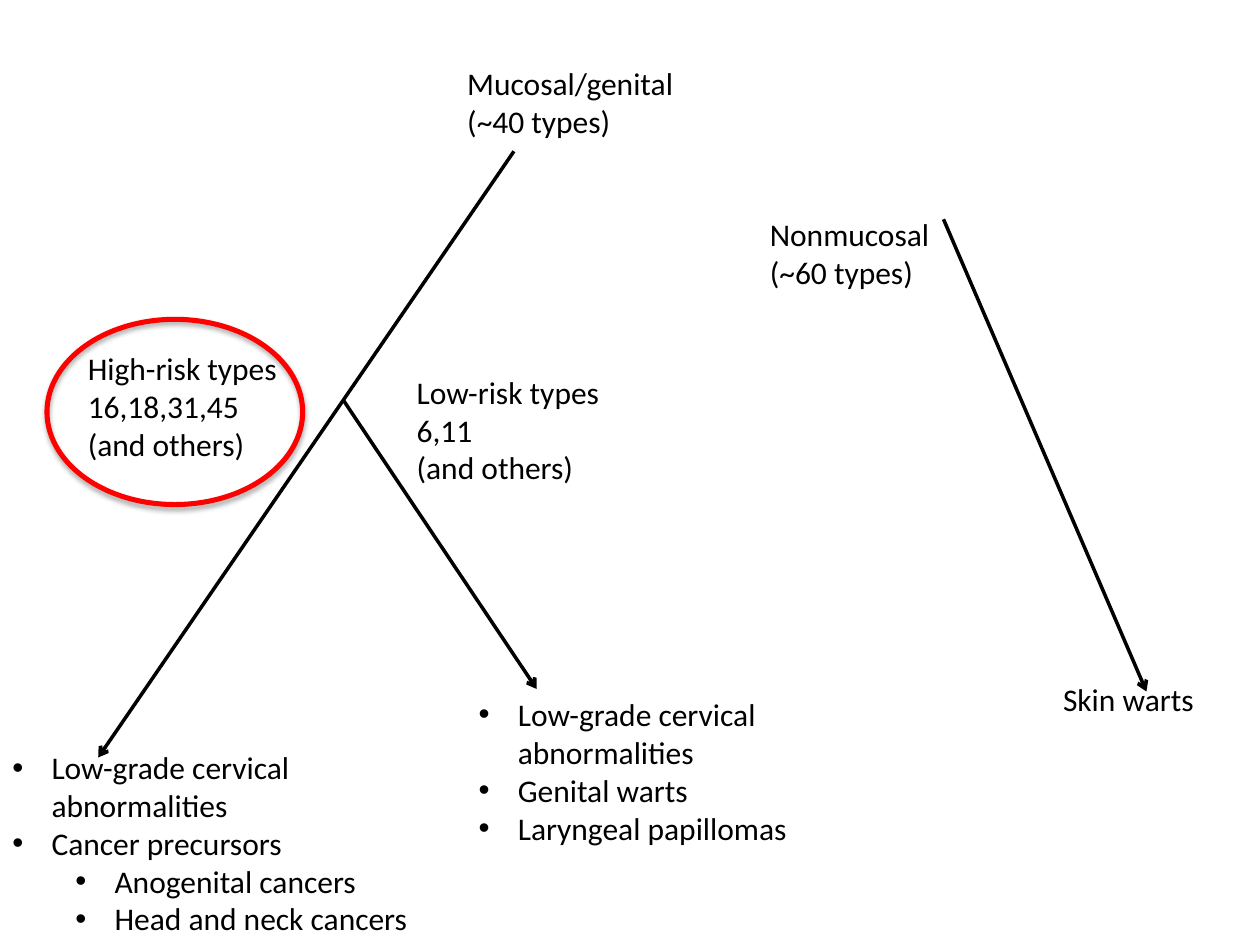
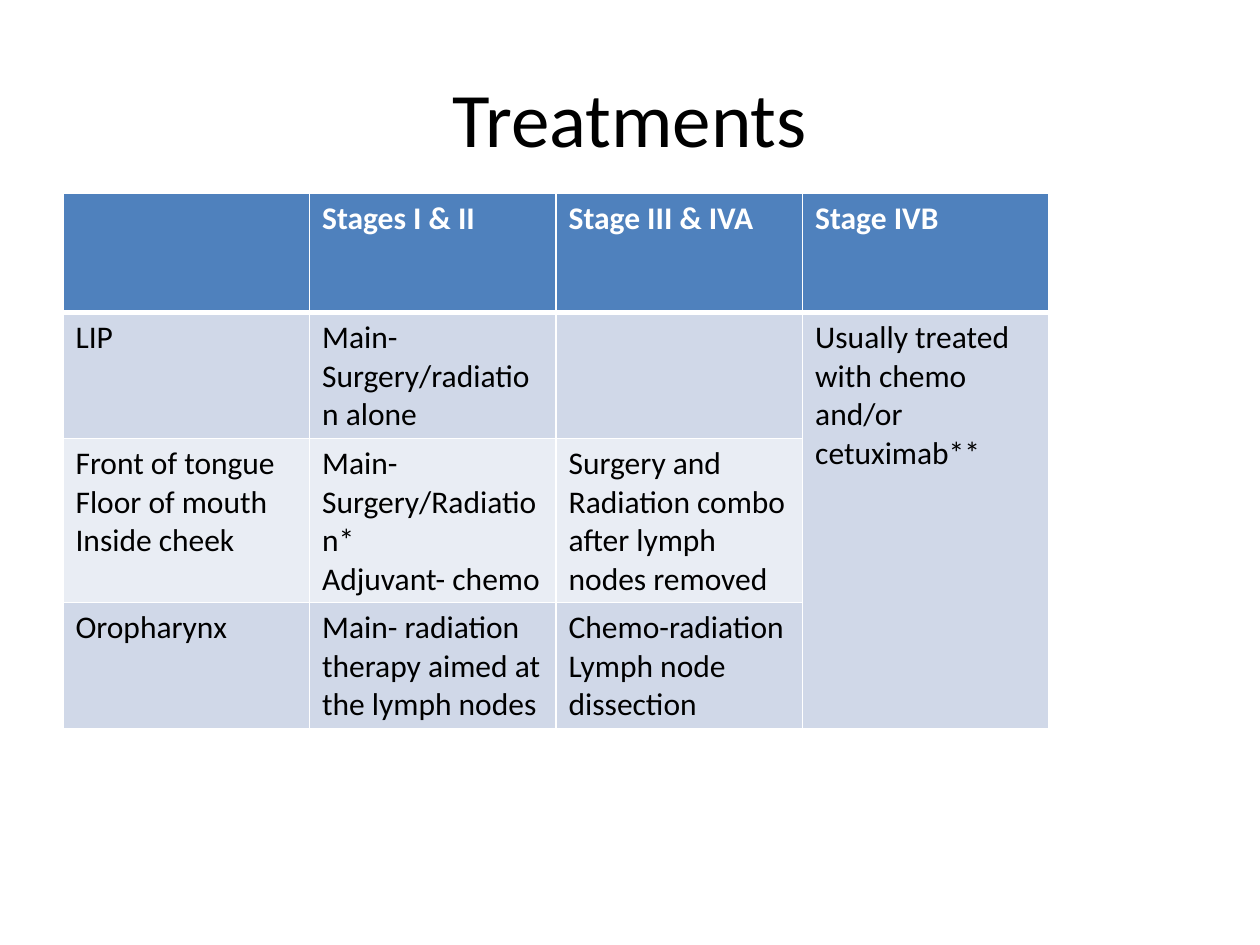
from lxml import etree
from pptx import Presentation
from pptx.dml.color import RGBColor
from pptx.enum import shapes, text
from pptx.oxml import parse_xml
from pptx.oxml.ns import nsdecls, qn
from pptx.util import Cm, Pt

FONT = "Calibri"
BLACK, WHITE, RED = "000000", "FFFFFF", "FF0000"
HEADER, BAND_DARK, BAND_LIGHT = "4F81BD", "D0D8E8", "E9EDF4"

# Slide 1: labels as (left, top, width, height), lines
LABELS = [
    ((9.17, 1.17, 4.72, 1.8), ["Mucosal/genital", "(~40 types)"]),
    ((1.52, 6.91, 4.37, 2.57), ["High-risk types", "16,18,31,45", "(and others)"]),
    ((8.15, 7.39, 4.24, 2.57), ["Low-risk types", "6,11", "(and others)"]),
    ((15.27, 4.22, 3.76, 1.8), ["Nonmucosal", "(~60 types)"]),
    ((21.18, 13.59, 3.18, 1.02), ["Skin warts"]),
]
# Bulleted outcomes as (level, text)
OUTCOMES = [
    ((0, 14.96, 8.94, 4.11), [
        (0, "Low-grade cervical abnormalities"), (0, "Cancer precursors"),
        (1, "Anogenital cancers"), (1, "Head and neck cancers")]),
    ((9.4, 13.89, 7.59, 3.33), [
        (0, "Low-grade cervical abnormalities"), (0, "Genital warts"),
        (0, "Laryngeal papillomas")]),
]
ARROWS = [
    (10.36, 3.05, 1.98, 15.27),
    (6.93, 8.08, 10.82, 13.89),
    (19.02, 4.42, 23.11, 13.94),
]
HIGH_RISK_RING = (0.91, 6.4, 5.23, 3.81)

# Slide 2: each cell is a list of paragraphs
TITLE = "Treatments"
TREATMENTS = [
    [[], ["Stages I & II"], ["Stage III & IVA"], ["Stage IVB"]],
    [["LIP"], ["Main- Surgery/radiation alone"], [],
     ["Usually treated with chemo and/or cetuximab**"]],
    [["Front of tongue", "Floor of mouth", "Inside cheek"],
     ["Main- Surgery/Radiation*", "Adjuvant- chemo"],
     ["Surgery and Radiation combo after lymph nodes removed"], []],
    [["Oropharynx"], ["Main- radiation therapy aimed at the lymph nodes"],
     ["Chemo-radiation", "Lymph node dissection"], []],
]
COL_WIDTH, ROW_HEIGHT = 4.97, 2.41


def rgb(color):
    return RGBColor.from_string(color)


def write(tf, lines, size=18, color=BLACK, bold=False, align=None, bullets=False):
    """Fill a text frame; with bullets, each line is (level, text)."""
    for i, line in enumerate(lines):
        level, words = line if bullets else (0, line)
        p = tf.paragraphs[0] if i == 0 else tf.add_paragraph()
        p.level, p.alignment = level, align
        if bullets:
            pPr = p._p.get_or_add_pPr()
            pPr.set("marL", str(Cm(0.79 + 1.27 * level)))
            pPr.set("indent", str(-Cm(0.79)))
            etree.SubElement(pPr, qn("a:buFont")).set("typeface", "Arial")
            etree.SubElement(pPr, qn("a:buChar")).set("char", "•")
        r = p.add_run()
        r.text = words
        r.font.name, r.font.size, r.font.bold = FONT, Pt(size), bold
        r.font.color.rgb = rgb(color)


def add_text(slide, box, lines, wrap=True, anchor=text.MSO_ANCHOR.TOP, **style):
    tf = slide.shapes.add_textbox(*map(Cm, box)).text_frame
    tf.word_wrap, tf.vertical_anchor = wrap, anchor
    write(tf, lines, **style)


def add_arrow(slide, ends):
    cx = slide.shapes.add_connector(shapes.MSO_CONNECTOR.STRAIGHT, *map(Cm, ends))
    cx.line.color.rgb, cx.line.width = rgb(BLACK), Pt(2)
    etree.SubElement(cx.line._get_or_add_ln(), qn("a:tailEnd")).set("type", "arrow")
    etree.SubElement(cx._element.spPr, qn("a:effectLst"))


def add_ring(slide, box):
    sp = slide.shapes.add_shape(shapes.MSO_SHAPE.DONUT, *map(Cm, box))
    sp.adjustments[0] = 0.02
    sp.fill.solid()
    sp.fill.fore_color.rgb = sp.line.color.rgb = rgb(RED)
    sp.line.width = Pt(0.75)
    sp._element.spPr.append(parse_xml(
        f'<a:effectLst {nsdecls("a")}><a:outerShdw blurRad="{Pt(3.1)}" '
        f'dist="{Pt(1.8)}" dir="5400000" rotWithShape="0"><a:srgbClr val="{BLACK}">'
        '<a:alpha val="35000"/></a:srgbClr></a:outerShdw></a:effectLst>'))


def set_borders(cell, **widths):
    tcPr = cell._tc.get_or_add_tcPr()
    for i, side in enumerate("LRTB"):
        tcPr.insert(i, parse_xml(
            f'<a:ln{side} {nsdecls("a")} w="{Pt(widths.get(side, 1))}"><a:solidFill>'
            f'<a:srgbClr val="{WHITE}"/></a:solidFill></a:ln{side}>'))


def risk_slide(slide):
    for ends in ARROWS:
        add_arrow(slide, ends)
    for box, lines in LABELS:
        add_text(slide, box, lines, wrap=False)
    for box, lines in OUTCOMES:
        add_text(slide, box, lines, bullets=True)
    add_ring(slide, HIGH_RISK_RING)


def treatment_slide(slide):
    add_text(slide, (1.27, 0.76, 22.86, 3.18), [TITLE], size=44,
             anchor=text.MSO_ANCHOR.MIDDLE, align=text.PP_ALIGN.CENTER)
    rows, cols = len(TREATMENTS), len(TREATMENTS[0])
    table = slide.shapes.add_table(rows, cols, Cm(1.27), Cm(3.89), Cm(COL_WIDTH * cols),
                                   Cm(ROW_HEIGHT * rows)).table
    for col in table.columns:
        col.width = Cm(COL_WIDTH)
    for i, row in enumerate(TREATMENTS):
        table.rows[i].height = Cm(ROW_HEIGHT)
        head = i == 0
        for j, lines in enumerate(row):
            cell = table.cell(i, j)
            last = j == cols - 1
            fill = HEADER if head else BAND_DARK if i % 2 or last else BAND_LIGHT
            cell.fill.solid()
            cell.fill.fore_color.rgb = rgb(fill)
            set_borders(cell, B=3 if head else 1, T=3 if i == 1 else 1)
            write(cell.text_frame, lines, color=WHITE if head else BLACK, bold=head)
    # Stage IVB treatment covers every site
    table.cell(1, cols - 1).merge(table.cell(rows - 1, cols - 1))


def main():
    prs = Presentation()
    prs.slide_width, prs.slide_height = Cm(25.4), Cm(19.05)
    for build in (risk_slide, treatment_slide):
        build(prs.slides.add_slide(prs.slide_layouts[6]))
    prs.save("out.pptx")


if __name__ == "__main__":
    main()
